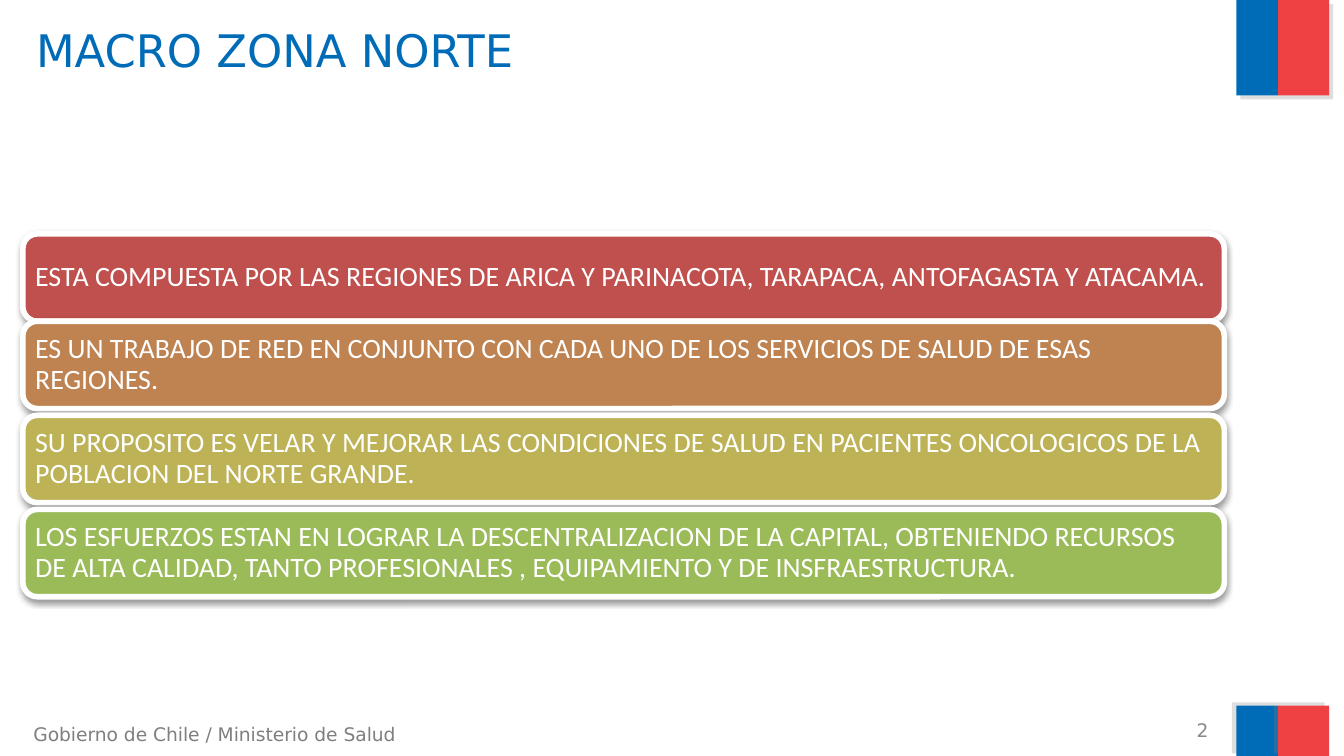
from lxml import etree
from pptx import Presentation
from pptx import util as u
from pptx.dml.color import RGBColor
from pptx.enum import shapes, text
from pptx.oxml.ns import qn

BLUE = RGBColor(0x00, 0x6C, 0xB7)
RED = RGBColor(0xEF, 0x41, 0x44)
WHITE = RGBColor(0xFF, 0xFF, 0xFF)
SHADOW_GRAY = RGBColor(0x80, 0x80, 0x80)
GRAY = RGBColor(0x7F, 0x7F, 0x7F)
LIGHT_GRAY = RGBColor(0x89, 0x89, 0x89)
BLACK = RGBColor(0x00, 0x00, 0x00)

STATEMENTS = [
    (0, RGBColor(0xC0, 0x50, 0x4D),
     "ESTA COMPUESTA POR LAS REGIONES DE ARICA Y PARINACOTA, TARAPACA, "
     "ANTOFAGASTA Y ATACAMA."),
    (0.65, RGBColor(0xBE, 0x83, 0x51),
     "ES UN TRABAJO DE RED EN CONJUNTO CON CADA UNO DE LOS SERVICIOS DE SALUD "
     "DE ESAS REGIONES."),
    (1.35, RGBColor(0xBD, 0xB2, 0x55),
     "SU PROPOSITO ES VELAR Y MEJORAR LAS CONDICIONES DE SALUD EN PACIENTES "
     "ONCOLOGICOS DE LA POBLACION DEL NORTE GRANDE."),
    (2.05, RGBColor(0x9B, 0xBB, 0x59),
     "LOS ESFUERZOS ESTAN EN LOGRAR LA DESCENTRALIZACION DE LA CAPITAL, "
     "OBTENIENDO RECURSOS DE ALTA CALIDAD, TANTO PROFESIONALES , EQUIPAMIENTO "
     "Y DE INSFRAESTRUCTURA."),
]


def add_shadow(shape, color, opacity, blur, distance, angle):
    shape.shadow.inherit = False
    effects = shape.element.spPr.find(qn("a:effectLst"))
    shadow = etree.SubElement(
        effects, qn("a:outerShdw"), blurRad=str(u.Pt(blur)),
        dist=str(u.Pt(distance)), dir=str(angle * 60000),
        algn="ctr", rotWithShape="0")
    tint = etree.SubElement(shadow, qn("a:srgbClr"), val=str(color))
    etree.SubElement(tint, qn("a:alpha"), val=str(opacity * 1000))


def add_box(slide, kind, left, top, width, height, color):
    shape = slide.shapes.add_shape(
        kind, u.Inches(left), u.Inches(top), u.Inches(width), u.Inches(height))
    shape.fill.solid()
    shape.fill.fore_color.rgb = color
    shape.line.fill.background()
    return shape


def write(frame, words, font_name, size, color,
          align=text.PP_ALIGN.LEFT, anchor=text.MSO_ANCHOR.TOP):
    frame.word_wrap = True
    frame.vertical_anchor = anchor
    paragraph = frame.paragraphs[0]
    paragraph.text = words
    paragraph.alignment = align
    paragraph.font.name = font_name
    paragraph.font.size = u.Pt(size)
    paragraph.font.color.rgb = color
    return paragraph


def add_label(slide, left, top, width, height, words, size, color, **layout):
    label = slide.shapes.add_textbox(
        u.Inches(left), u.Inches(top), u.Inches(width), u.Inches(height))
    write(label.text_frame, words, "DejaVu Sans", size, color, **layout)


def add_flag(slide, left, top, height, shadow_angle):
    for offset, width, color in ((0, 0.31, BLUE), (0.31, 0.38, RED)):
        band = add_box(slide, shapes.MSO_SHAPE.RECTANGLE,
                       left + offset, top, width, height, color)
        add_shadow(band, SHADOW_GRAY, 25, 0, 3, shadow_angle)


def add_statements(slide, left, top, width, height):
    for offset, color, words in STATEMENTS:
        bar = add_box(slide, shapes.MSO_SHAPE.ROUNDED_RECTANGLE,
                      left, top + offset, width, height, color)
        bar.line.color.rgb = WHITE
        bar.line.width = u.Pt(3)
        add_shadow(bar, BLACK, 38, 3.1, 1.6, 90)
        frame = bar.text_frame
        frame.margin_left = frame.margin_right = u.Inches(0.06)
        frame.margin_top = frame.margin_bottom = u.Inches(0.06)
        paragraph = write(frame, words, "Calibri", 15, WHITE,
                          anchor=text.MSO_ANCHOR.MIDDLE)
        paragraph.line_spacing = 0.9


def main():
    presentation = Presentation()
    presentation.slide_width = u.Inches(10)
    presentation.slide_height = u.Inches(10 * 9 / 16)
    slide = presentation.slides.add_slide(presentation.slide_layouts[6])
    add_flag(slide, 9.2, 0, 0.71, 45)
    add_flag(slide, 9.2, 5.25, 0.38, 215)
    add_label(slide, 0.15, 5.33, 3.02, 0.27,
              "Gobierno de Chile / Ministerio de Salud", 10, GRAY)
    add_label(slide, 0.17, 0.12, 8.93, 0.94, "MACRO ZONA NORTE", 24, BLUE)
    add_label(slide, 6.76, 5.35, 2.33, 0.16, "2", 10, LIGHT_GRAY,
              align=text.PP_ALIGN.RIGHT, anchor=text.MSO_ANCHOR.MIDDLE)
    add_statements(slide, 0.17, 1.74, 8.94, 0.65)
    presentation.save("out.pptx")


if __name__ == "__main__":
    main()
